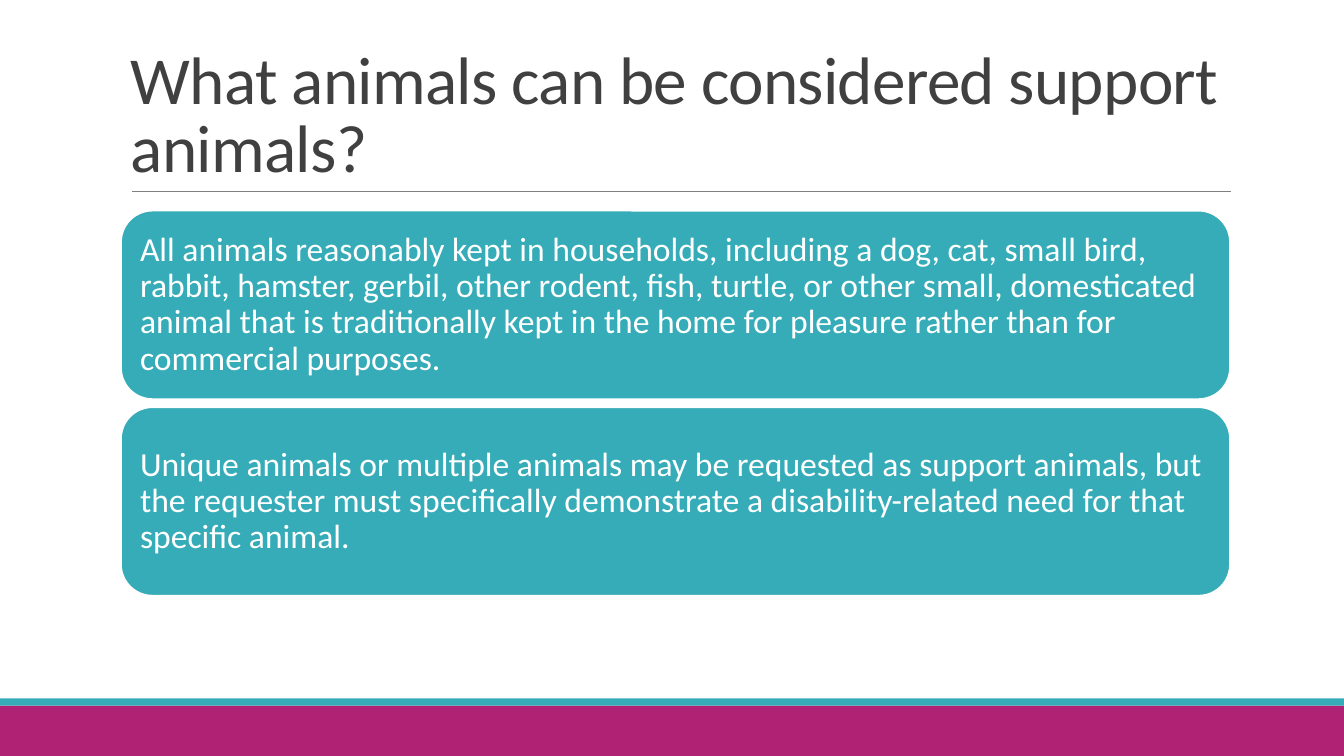
from pptx import Presentation
from pptx.dml.color import RGBColor
from pptx.enum.shapes import MSO_CONNECTOR, MSO_SHAPE
from pptx.enum.text import MSO_ANCHOR, PP_ALIGN
from pptx.oxml.ns import qn
from pptx.util import Inches, Pt
from lxml import etree

# Content
TITLE = "What animals can be considered support animals?"
ANSWERS = [
    "All animals reasonably kept in households, including a dog, cat, small bird, "
    "rabbit, hamster, gerbil, other rodent, fish, turtle, or other small, "
    "domesticated animal that is traditionally kept in the home for pleasure "
    "rather than for commercial purposes.",
    "Unique animals or multiple animals may be requested as support animals, but "
    "the requester must specifically demonstrate a disability-related need for "
    "that specific animal.",
]

COLORS = {"teal": "36ACB8", "magenta": "B02273", "rule": "808080",
          "title": "404040", "white": "FFFFFF"}
TITLE_FONT = {"name": "Calibri", "size": Pt(48)}
ANSWER_FONT = {"name": "Calibri", "size": Pt(24)}
TITLE_FRAME = {"word_wrap": True, "vertical_anchor": MSO_ANCHOR.BOTTOM}
ANSWER_FRAME = {"word_wrap": True, "vertical_anchor": MSO_ANCHOR.MIDDLE,
                "margin_left": Inches(0.1), "margin_right": Inches(0.1),
                "margin_top": Inches(0.1), "margin_bottom": Inches(0.1)}

# Layout in inches
WIDTH, HEIGHT = 13.33, 7.5
LEFT, CONTENT_WIDTH = 1.2, 11
CARD_TOP, CARD_HEIGHT, CARD_GAP = 2.09, 1.87, 0.08
BANDS = [("magenta", 7, 0.5), ("teal", 6.93, 0.07)]


def rgb(name):
    return RGBColor.from_string(COLORS[name])


def apply(target, values):
    for key, value in values.items():
        setattr(target, key, value)


def add_block(kind, left, top, width, height, fill):
    block = slide.shapes.add_shape(
        kind, Inches(left), Inches(top), Inches(width), Inches(height))
    block.shadow.inherit = False
    block.fill.solid()
    block.fill.fore_color.rgb = rgb(fill)
    block.line.fill.background()
    return block


def write(shape, text, frame, font, color, spacing):
    apply(shape.text_frame, frame)
    paragraph = shape.text_frame.paragraphs[0]
    apply(paragraph, {"alignment": PP_ALIGN.LEFT, "line_spacing": spacing})
    run = paragraph.add_run()
    run.text = text
    apply(run.font, font)
    run.font.color.rgb = rgb(color)
    return run


prs = Presentation()
prs.slide_width, prs.slide_height = Inches(WIDTH), Inches(HEIGHT)
slide = prs.slides.add_slide(prs.slide_layouts[6])

# Footer bands
for color, top, height in BANDS:
    add_block(MSO_SHAPE.RECTANGLE, 0, top, WIDTH, height, color)

# Rule under the title
rule = slide.shapes.add_connector(
    MSO_CONNECTOR.STRAIGHT, Inches(1.31), Inches(1.9), Inches(12.21), Inches(1.9))
rule.line.color.rgb = rgb("rule")
rule.line.width = Pt(0.5)
etree.SubElement(rule._element.spPr, qn("a:effectLst"))

# Title
title = slide.shapes.add_textbox(
    Inches(LEFT), Inches(0.31), Inches(CONTENT_WIDTH), Inches(1.59))
title_run = write(title, TITLE, TITLE_FRAME, TITLE_FONT, "title", 0.85)
title_run.font._element.set("spc", "-50")

# Answer cards
for index, answer in enumerate(ANSWERS):
    card_top = CARD_TOP + index * (CARD_HEIGHT + CARD_GAP)
    card = add_block(MSO_SHAPE.ROUNDED_RECTANGLE, LEFT, card_top,
                     CONTENT_WIDTH, CARD_HEIGHT, "teal")
    card.line.color.rgb = rgb("white")
    card.line.width = Pt(1.25)
    write(card, answer, ANSWER_FRAME, ANSWER_FONT, "white", 0.9)

prs.save("out.pptx")
